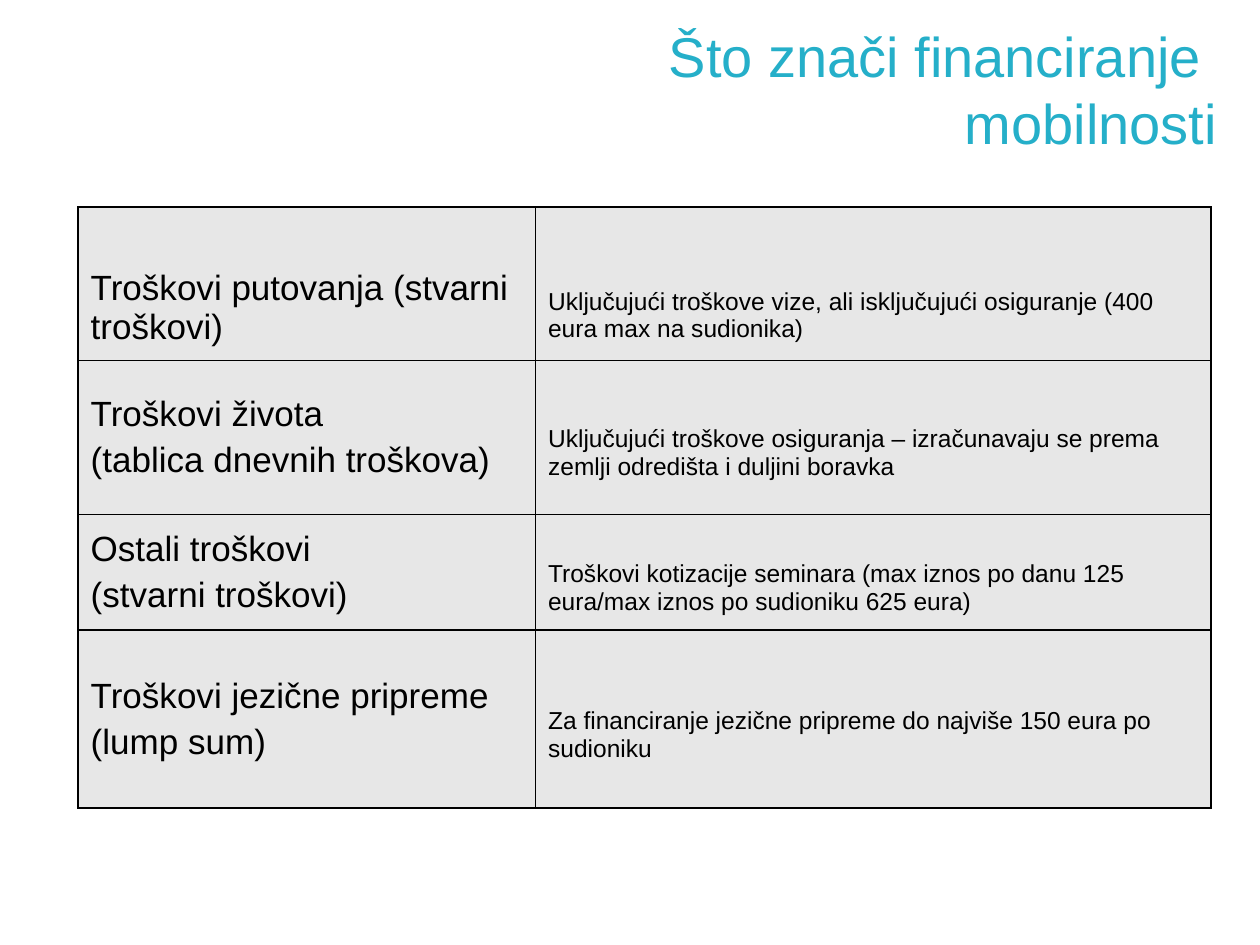
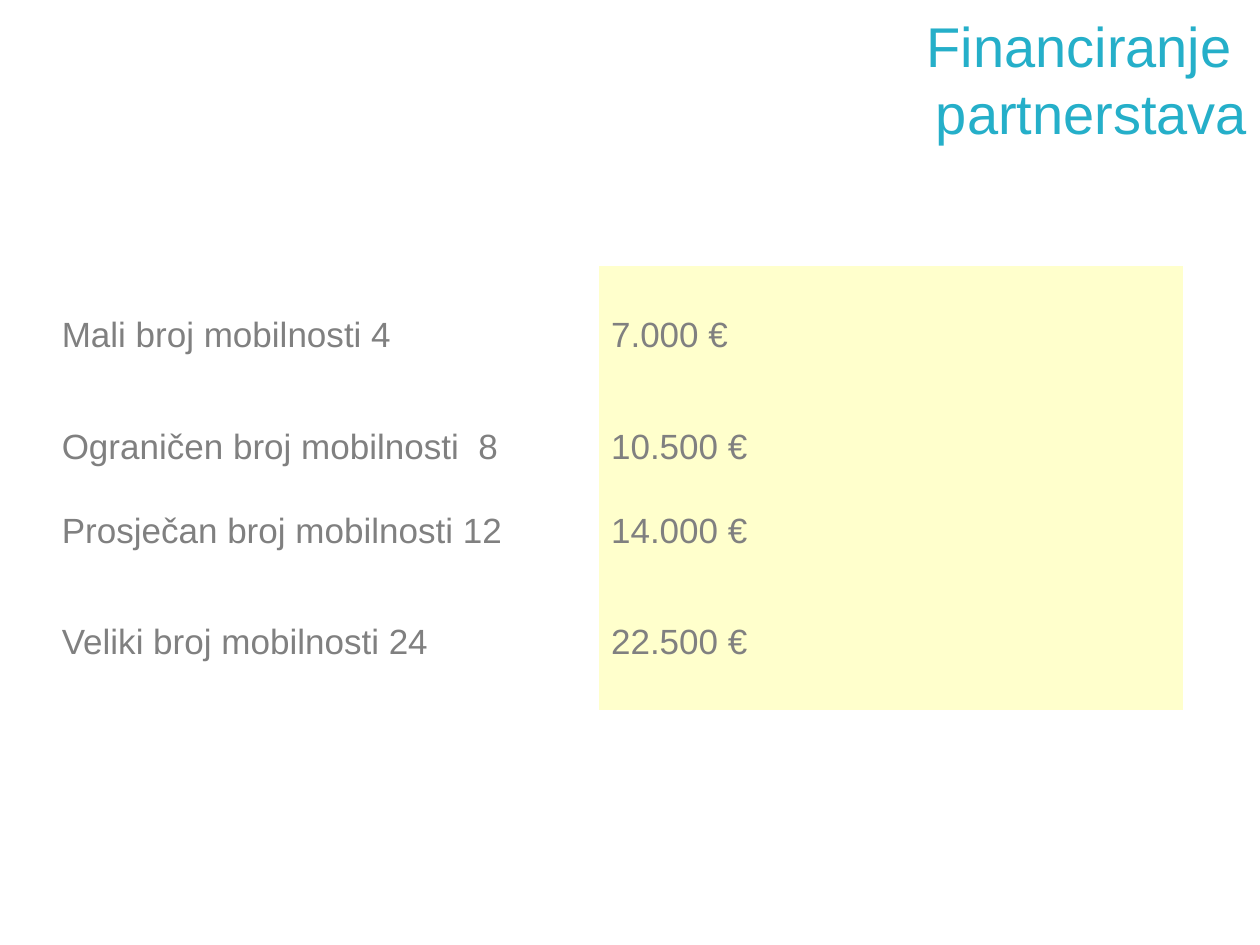
from lxml import etree
from pptx import Presentation
from pptx.dml.color import RGBColor
from pptx.enum.text import MSO_ANCHOR, PP_ALIGN
from pptx.oxml.ns import qn
from pptx.util import Inches, Pt

MIDDLE, RIGHT = MSO_ANCHOR.MIDDLE, PP_ALIGN.RIGHT
FONT = "Arial"
TEAL, BLACK, GREY = "25AFC9", "000000", "808080"
PALE_GREY, PALE_YELLOW = "E7E7E7", "FFFFCC"
W, H = 10, 7.5
BLANK_LINE = 0.25


def paint(fmt, color):
    if color is None:
        fmt.background()
    else:
        fmt.solid()
        fmt.fore_color.rgb = RGBColor.from_string(color)


def write(tf, text, size, color, align=None):
    tf.text = text
    for i, p in enumerate(tf.paragraphs):
        p.alignment = align
        if i:
            p.space_before = Pt(size * 0.2)
        for r in p.runs:
            r.font.name = FONT
            r.font.size = Pt(size)
            paint(r.font.fill, color)


slides = [
    {
        "title": "Što znači financiranje \vmobilnosti",
        "title_box": (0.203, 0.021, 0.773, 0.145),
        "origin": (0.062, 0.219),
        "cols": (3.63, 5.36),
        "rows": (1.22, 1.22, 0.92, 1.41),
        "fills": (PALE_GREY, PALE_GREY),
        "sizes": (20, 14),
        "color": BLACK,
        "border": BLACK,
        "margin": 0.05,
        "blank_lines": ((1.5, 2), (0, 1), (0, 1), (0, 1)),
        "cells": (
            ("Troškovi putovanja (stvarni troškovi)",
             "Uključujući troškove vize, ali isključujući osiguranje (400 eura max na sudionika)"),
            ("Troškovi života\n(tablica dnevnih troškova)",
             "Uključujući troškove osiguranja – izračunavaju se prema zemlji odredišta i duljini boravka"),
            ("Ostali troškovi\n(stvarni troškovi)",
             "Troškovi kotizacije seminara (max iznos po danu 125 eura/max iznos po sudioniku 625 eura)"),
            ("Troškovi jezične pripreme\n(lump sum)",
             "Za financiranje jezične pripreme do najviše 150 eura po sudioniku"),
        ),
    },
    {
        "title": "Financiranje \vpartnerstava",
        "title_box": (0.273, 0, 0.727, 0.167),
        "origin": (0.039, 0.281),
        "cols": (4.36, 4.64),
        "rows": (1.11, 0.66, 0.68, 1.08),
        "fills": (None, PALE_YELLOW),
        "sizes": (20, 20),
        "color": GREY,
        "border": None,
        "margin": 0,
        "blank_lines": ((0, 0),) * 4,
        "cells": (
            ("Mali broj mobilnosti 4", "7.000 €"),
            ("Ograničen broj mobilnosti  8", "10.500 €"),
            ("Prosječan broj mobilnosti 12", "14.000 €"),
            ("Veliki broj mobilnosti 24", "22.500 €"),
        ),
    },
]

prs = Presentation()
prs.slide_width, prs.slide_height = Inches(W), Inches(H)

for data in slides:
    s = prs.slides.add_slide(prs.slide_layouts[6])

    x, y, w, h = data["title_box"]
    title = s.shapes.add_textbox(Inches(x * W), Inches(y * H), Inches(w * W), Inches(h * H))
    tf = title.text_frame
    tf.word_wrap = True
    tf.vertical_anchor = MIDDLE
    write(tf, data["title"], 32, TEAL, RIGHT)

    cols, rows = data["cols"], data["rows"]
    x, y = data["origin"]
    table = s.shapes.add_table(len(rows), len(cols), Inches(x * W), Inches(y * H),
                               Inches(sum(cols)), Inches(sum(rows))).table
    table.first_row = table.horz_banding = False
    for col, width in zip(table.columns, cols):
        col.width = Inches(width)

    for i, (row, height) in enumerate(zip(table.rows, rows)):
        row.height = Inches(height)
        for j, cell in enumerate(row.cells):
            cell.vertical_anchor = MIDDLE
            cell.margin_top = Inches(data["margin"] + data["blank_lines"][i][j] * BLANK_LINE)
            cell.margin_bottom = Inches(data["margin"])
            write(cell.text_frame, data["cells"][i][j], data["sizes"][j], data["color"])

            tc_pr = cell._tc.get_or_add_tcPr()
            for side in ("a:lnL", "a:lnR", "a:lnT", "a:lnB"):
                ln = etree.SubElement(tc_pr, qn(side), w=str(Pt(1)))
                if data["border"]:
                    solid = etree.SubElement(ln, qn("a:solidFill"))
                    etree.SubElement(solid, qn("a:srgbClr"), val=data["border"])
                else:
                    etree.SubElement(ln, qn("a:noFill"))
            paint(cell.fill, data["fills"][j])

prs.save("out.pptx")
